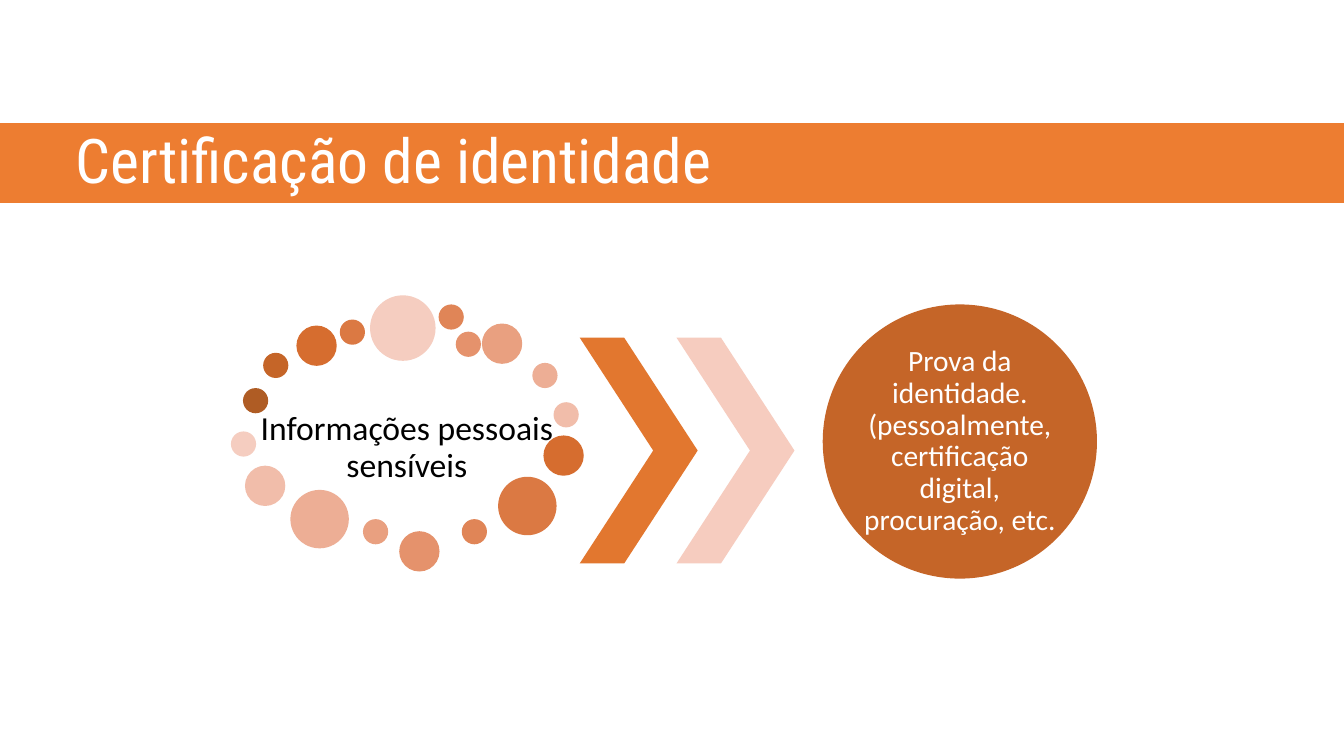
from pptx import Presentation
from pptx.dml.color import RGBColor
from pptx.enum.shapes import MSO_SHAPE as Shape
from pptx.enum.text import MSO_ANCHOR as Anchor, PP_ALIGN as Align
from pptx.util import Inches, Pt

COLORS = {
    "white": "FFFFFF",
    "black": "000000",
    "band": "ED7D31",
    "chevron": "E2772F",
    "chevron_pale": "F6CCBF",
    "proof": "C56528",
}
RAMP = ["AF5C24", "C56528", "D66D2F", "DB7943", "E08557",
        "E5926C", "E9A080", "EDAE95", "F1BDAA", "F5CDC0"]
COLORS.update({f"dot{i}": c for i, c in enumerate(RAMP)})

SMALL, MEDIUM, LARGE, HUGE = 0.25, 0.4, 0.58, 0.65
UPPER_DOTS = [
    (2.41, 3.85, SMALL), (2.61, 3.5, SMALL), (2.94, 3.23, MEDIUM),
    (3.37, 3.17, SMALL), (4.35, 3.02, SMALL), (4.52, 3.29, SMALL),
    (4.78, 3.21, MEDIUM), (5.28, 3.6, SMALL), (5.49, 3.99, SMALL),
    (3.67, 2.93, HUGE),
]
LOWER_DOTS = [
    (2.29, 4.28, SMALL), (2.43, 4.62, MEDIUM), (2.88, 4.86, LARGE),
    (3.6, 5.15, SMALL), (3.96, 5.27, MEDIUM), (4.58, 5.15, SMALL),
    (4.94, 4.73, LARGE), (5.39, 4.32, MEDIUM),
]


class Deck:
    body_font = "Calibri"
    title_font = "Roboto Condensed"

    def __init__(self):
        self.prs = Presentation()
        self.prs.slide_width = Inches(13.33)
        self.prs.slide_height = Inches(7.5)
        self.slide = self.prs.slides.add_slide(self.prs.slide_layouts[6])

    def color(self, name):
        return RGBColor.from_string(COLORS[name])

    def shape(self, kind, x, y, w, h, fill, line=None):
        sp = self.slide.shapes.add_shape(
            kind, Inches(x), Inches(y), Inches(w), Inches(h))
        sp.shadow.inherit = False
        sp.fill.solid()
        sp.fill.fore_color.rgb = self.color(fill)
        if line:
            sp.line.color.rgb = self.color(line)
            sp.line.width = Pt(1)
        else:
            sp.line.fill.background()
        return sp

    def circle(self, x, y, size, fill):
        return self.shape(Shape.OVAL, x, y, size, size, fill)

    def chevron(self, x, fill):
        sp = self.shape(Shape.CHEVRON, x, 3.35, 1.17, 2.24, fill)
        sp.adjustments[0] = 0.623

    def text(self, text, x, y, w, h, size, color,
             font=body_font, align=Align.CENTER, inset=None):
        sp = self.slide.shapes.add_textbox(
            Inches(x), Inches(y), Inches(w), Inches(h))
        tf = sp.text_frame
        tf.word_wrap = True
        tf.vertical_anchor = Anchor.MIDDLE
        if inset is not None:
            tf.margin_left = tf.margin_right = Inches(inset)
            tf.margin_top = tf.margin_bottom = Inches(inset)
        p = tf.paragraphs[0]
        p.text = text
        p.alignment = align
        p.line_spacing = 0.9
        p.font.name = font
        p.font.size = Pt(size)
        p.font.color.rgb = self.color(color)


def main():
    deck = Deck()
    deck.text("Informações pessoais sensíveis",
              2.44, 3.92, 3.19, 1.05, 24, "black", inset=0.03)
    for i, dot in enumerate(UPPER_DOTS):
        deck.circle(*dot, f"dot{i}")
    for i, dot in enumerate(LOWER_DOTS):
        deck.circle(*dot, f"dot{len(RAMP) - 1 - i}")

    deck.chevron(5.75, "chevron")
    deck.chevron(6.71, "chevron_pale")

    deck.circle(8.16, 3.02, 2.72, "proof")
    deck.text("Prova da identidade. (pessoalmente, certificação digital, "
              "procuração, etc.",
              8.56, 3.42, 1.92, 1.92, 21, "white", inset=0)

    deck.shape(Shape.RECTANGLE, -0.3, 1.21, 13.88, 0.81, "band", "white")
    deck.text("Certificação de identidade", 0.65, 0.9, 11.5, 1.45, 44,
              "white", font=deck.title_font, align=Align.LEFT)
    deck.prs.save("out.pptx")


if __name__ == "__main__":
    main()
